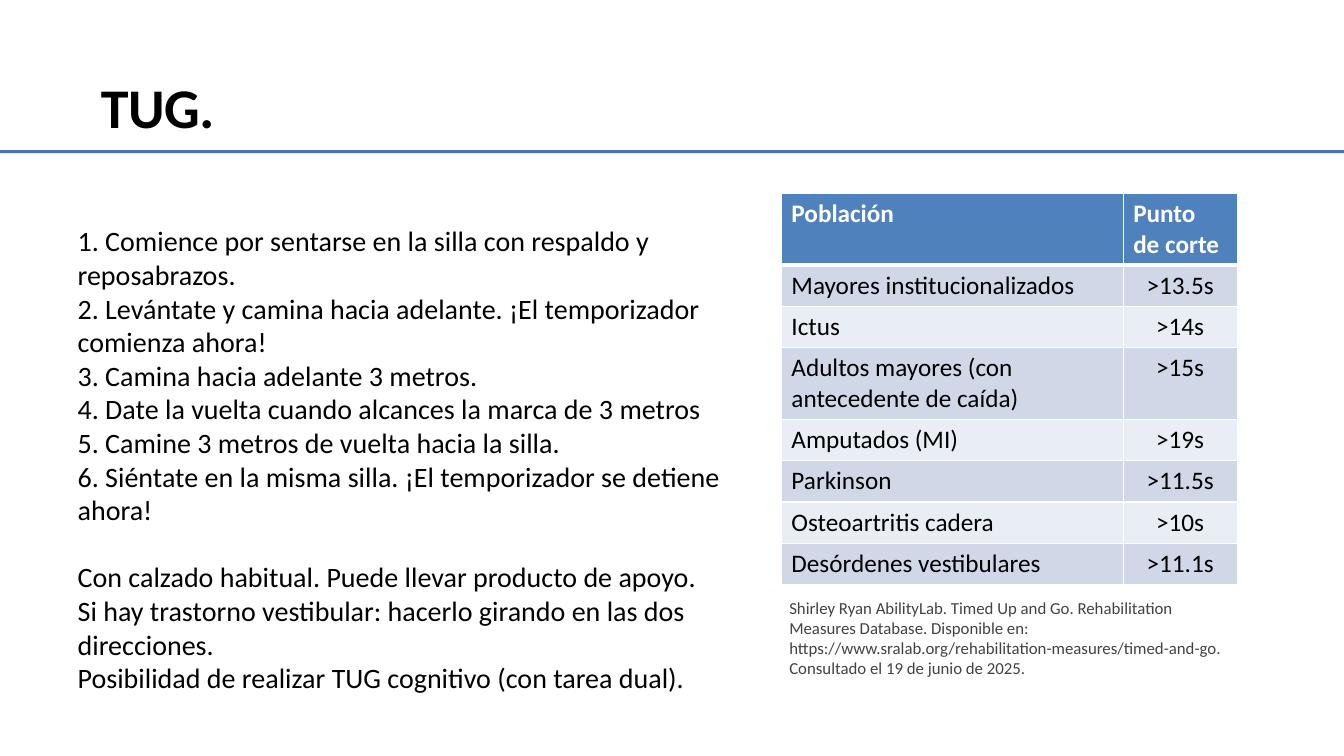
"""Build the TUG slide: test steps, cut-off table and citation."""
from dataclasses import dataclass

from lxml.etree import SubElement
from pptx import Presentation
from pptx.dml.color import RGBColor as Color
from pptx.enum.shapes import MSO_SHAPE as Preset
from pptx.enum.text import MSO_ANCHOR as Anchor, MSO_AUTO_SIZE as AutoSize, PP_ALIGN as Align
from pptx.oxml import parse_xml
from pptx.oxml.ns import nsdecls, qn
from pptx.util import Inches, Pt


@dataclass(frozen=True)
class Theme:
    font: str = "Calibri"
    ink: str = "000000"
    paper: str = "FFFFFF"
    note: str = "424242"
    rule: str = "4471C4"
    header: str = "4F81BD"
    bands: tuple = ("D0D8E8", "E9EDF4")
    title_size: int = 40
    body_size: int = 20
    table_size: int = 18
    note_size: int = 12


THEME = Theme()


def style(para, size, color, bold=False, align=Align.LEFT):
    para.alignment = align
    para.space_before = Pt(0)
    for span in para.runs:
        span.font.name = THEME.font
        span.font.size = Pt(size)
        span.font.bold = bold
        span.font.color.rgb = Color.from_string(color)


def place(box, left, top, width, height):
    box.left, box.top = Inches(left), Inches(top)
    box.width, box.height = Inches(width), Inches(height)
    box.text_frame.word_wrap = True
    box.text_frame.auto_size = AutoSize.NONE
    box.text_frame.vertical_anchor = Anchor.TOP


STEPS = [
    "1. Comience por sentarse en la silla con respaldo y reposabrazos.",
    "2. Levántate y camina hacia adelante. ¡El temporizador comienza ahora!",
    "3. Camina hacia adelante 3 metros.",
    "4. Date la vuelta cuando alcances la marca de 3 metros",
    "5. Camine 3 metros de vuelta hacia la silla.",
    "6. Siéntate en la misma silla. ¡El temporizador se detiene ahora!",
]
REMARKS = [
    "Con calzado habitual. Puede llevar producto de apoyo.",
    "Si hay trastorno vestibular: hacerlo girando en las dos direcciones.",
    "Posibilidad de realizar TUG cognitivo (con tarea dual).",
]
CUTOFFS = [
    ("Población", "Punto de corte"),
    ("Mayores institucionalizados", ">13.5s"),
    ("Ictus", ">14s"),
    ("Adultos mayores (con antecedente de caída)", ">15s"),
    ("Amputados (MI)", ">19s"),
    ("Parkinson", ">11.5s"),
    ("Osteoartritis cadera", ">10s"),
    ("Desórdenes vestibulares", ">11.1s"),
]
CITATION = (
    "Shirley Ryan AbilityLab. Timed Up and Go. Rehabilitation Measures Database. "
    "Disponible en: https://www.sralab.org/rehabilitation-measures/timed-and-go. "
    "Consultado el 19 de junio de 2025."
)

deck = Presentation()
deck.slide_width, deck.slide_height = Inches(13.33), Inches(7.5)
page = deck.slides.add_slide(deck.slide_layouts[1])

title = page.shapes.title
place(title, 1, 0.71, 8.75, 0.69)
frame = title.text_frame
frame.margin_left = frame.margin_right = frame.margin_bottom = 0
frame.margin_top = Inches(0.01)
frame.text = "TUG."
style(frame.paragraphs[0], THEME.title_size, THEME.ink, bold=True)
frame.paragraphs[0].runs[0].font._element.set("spc", "-30")

rule = page.shapes.add_shape(Preset.RECTANGLE, 0, Inches(1.49), deck.slide_width, Inches(0.03))
rule.shadow.inherit = False
rule.fill.solid()
rule.fill.fore_color.rgb = Color.from_string(THEME.rule)
rule.line.fill.background()

body = page.placeholders[1]
place(body, 0.67, 2.17, 6.81, 4.81)
body.text_frame.text = "\n".join(STEPS + REMARKS)
for para in body.text_frame.paragraphs:
    properties = para._p.get_or_add_pPr()
    properties.set("marL", "0")
    properties.set("indent", "0")
    SubElement(properties, qn("a:buNone"))
    style(para, THEME.body_size, THEME.ink)
body.text_frame.paragraphs[len(STEPS)].space_before = Pt(24)

table = page.shapes.add_table(
    len(CUTOFFS), 2, Inches(7.75), Inches(1.92), Inches(4.52), Inches(3.28)
).table
for column, width in zip(table.columns, (3.39, 1.13)):
    column.width = Inches(width)
for row_index, texts in enumerate(CUTOFFS):
    table.rows[row_index].height = Inches(0.41)
    is_header = row_index == 0
    fill = THEME.header if is_header else THEME.bands[(row_index - 1) % 2]
    for column_index, text in enumerate(texts):
        cell = table.cell(row_index, column_index)
        cell.text_frame.text = text
        centred = column_index == 1 and not is_header
        style(
            cell.text_frame.paragraphs[0],
            THEME.table_size,
            THEME.paper if is_header else THEME.ink,
            bold=is_header,
            align=Align.CENTER if centred else Align.LEFT,
        )
        cell.fill.solid()
        cell.fill.fore_color.rgb = Color.from_string(fill)
        for order, side in enumerate("LRTB"):
            thick = (side == "B" and is_header) or (side == "T" and row_index == 1)
            border = parse_xml(
                f'<a:ln{side} {nsdecls("a")} w="{Pt(3 if thick else 1)}"><a:solidFill>'
                f'<a:srgbClr val="{THEME.paper}"/></a:solidFill></a:ln{side}>'
            )
            cell._tc.get_or_add_tcPr().insert(order, border)

citation = page.shapes.add_textbox(0, 0, 0, 0)
place(citation, 7.73, 5.88, 4.52, 0.91)
citation.text_frame.text = CITATION
style(citation.text_frame.paragraphs[0], THEME.note_size, THEME.note)

deck.save("out.pptx")
